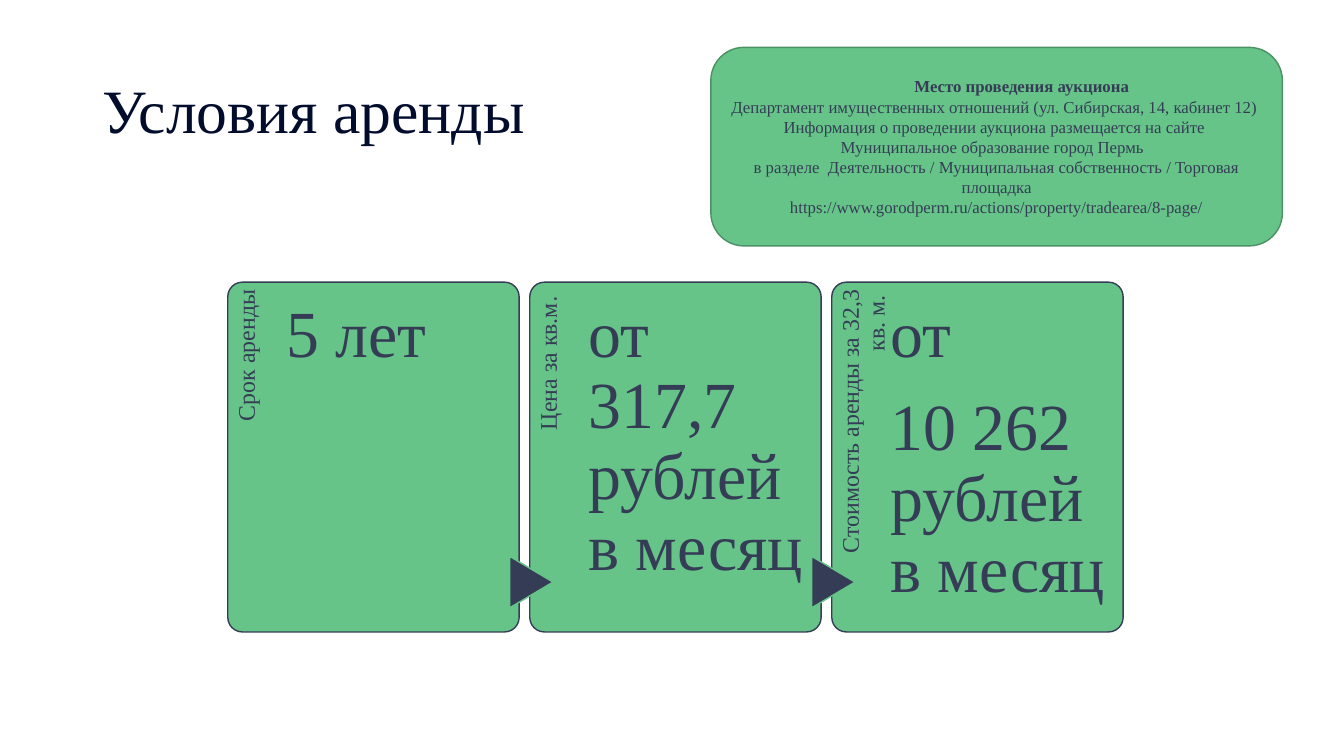
from pptx import Presentation
from pptx.dml.color import RGBColor
from pptx.enum.shapes import MSO_SHAPE
from pptx.enum.text import MSO_ANCHOR, PP_ALIGN
from pptx.util import Inches, Pt

COLORS = {"title": "020C2C", "ink": "353D56", "green": "66C488", "edge": "4B9165"}
FONT = "Times New Roman"
VENUE = [
    "Место проведения аукциона",
    "Департамент имущественных отношений (ул. Сибирская, 14, кабинет 12) ",
    "Информация о проведении аукциона размещается на сайте \n"
    "Муниципальное образование город Пермь  \n"
    "в разделе  Деятельность / Муниципальная собственность / Торговая площадка",
    "https://www.gorodperm.ru/actions/property/tradearea/8-page/",
]
# Label, label ending in Arial, value paragraphs
TERMS = [
    ("Срок аренды", "", ["5 лет"]),
    ("Цена за кв.м", ". ", ["от 317,7 рублей в месяц"]),
    ("Стоимость аренды за 32,3 кв. м. ", "", ["от", "10 262 рублей в месяц"]),
]
CARD_LEFT, CARD_TOP, CARD_STEP = 16.95, 37.33, 22.47
CARD_W, CARD_H = 21.68, 46.27


class SlideBuilder:
    """Draws on one slide; boxes are left, top, width, height in percent of its size."""

    def __init__(self, prs):
        self.width, self.height = prs.slide_width, prs.slide_height
        self.shapes = prs.slides.add_slide(prs.slide_layouts[6]).shapes

    def place(self, box):
        sizes = (self.width, self.height) * 2
        return [round(share * size / 100) for share, size in zip(box, sizes)]

    def shape(self, kind, box, fill, line, radius=None, rotation=0):
        sp = self.shapes.add_shape(kind, *self.place(box))
        sp.shadow.inherit = False
        sp.fill.solid()
        sp.fill.fore_color.rgb = RGBColor.from_string(COLORS[fill])
        sp.line.color.rgb = RGBColor.from_string(COLORS[line])
        sp.line.width = Pt(1)
        sp.rotation = rotation
        if radius is not None:
            sp.adjustments[0] = radius
        return sp

    def fill_text(self, sp, lines, size, color="ink", align=PP_ALIGN.LEFT,
                  anchor=MSO_ANCHOR.TOP, spacing=None, after=0):
        tf = sp.text_frame
        tf.word_wrap = True
        tf.vertical_anchor = anchor
        for i, line in enumerate(lines):
            p = tf.add_paragraph() if i else tf.paragraphs[0]
            p.text = line
            p.alignment = align
            p.line_spacing = spacing
            p.space_after = Pt(after)
            p.font.name = FONT
            p.font.size = Pt(size)
            p.font.color.rgb = RGBColor.from_string(COLORS[color])
        return tf

    def text(self, box, lines, size, insets=None, rotation=0, **style):
        sp = self.shapes.add_textbox(*self.place(box))
        sp.rotation = rotation
        tf = self.fill_text(sp, lines, size, spacing=0.9, **style)
        if insets:
            tf.margin_left, tf.margin_top, tf.margin_right, tf.margin_bottom = map(Inches, insets)
        return tf

    def venue(self, box, lines):
        sp = self.shape(MSO_SHAPE.ROUNDED_RECTANGLE, box, "green", "edge")
        tf = self.fill_text(sp, lines, 12, align=PP_ALIGN.CENTER, anchor=MSO_ANCHOR.MIDDLE)
        heading = tf.paragraphs[0]
        heading.font.bold = True
        heading._p.get_or_add_pPr().set("marL", str(Inches(0.5)))

    def card(self, left, label, ending, value):
        self.shape(MSO_SHAPE.ROUNDED_RECTANGLE, (left, CARD_TOP, CARD_W, CARD_H),
                   "green", "ink", radius=0.05)
        tf = self.text((left - 8.48, 52.4, 21.38, 7.73), [label], 17, (0, 0.06, 0.08, 0),
                       rotation=270, align=PP_ALIGN.RIGHT)
        if ending:
            r = tf.paragraphs[0].add_run()
            r.text = ending
            r.font.name = "Arial"
        self.text((left + 4.35, CARD_TOP, 16.2, CARD_H), value, 47, (0, 0.18, 0, 0), after=16)

    def arrow(self, left):
        self.shape(MSO_SHAPE.FLOWCHART_EXTRACT, (left - 1.8, 74.13, 3.83, 5.73),
                   "ink", "green", rotation=90)


def main():
    prs = Presentation()
    prs.slide_width, prs.slide_height = Inches(13.33), Inches(7.5)
    s = SlideBuilder(prs)
    s.text((6.9, 5.33, 86.25, 19.33), ["Условия аренды"], 44, color="title",
           anchor=MSO_ANCHOR.MIDDLE)
    s.venue((52.89, 6.27, 42.53, 26.27), VENUE)
    for i, term in enumerate(TERMS):
        left = CARD_LEFT + i * CARD_STEP
        s.card(left, *term)
        if i:
            s.arrow(left)
    prs.save("out.pptx")


if __name__ == "__main__":
    main()
